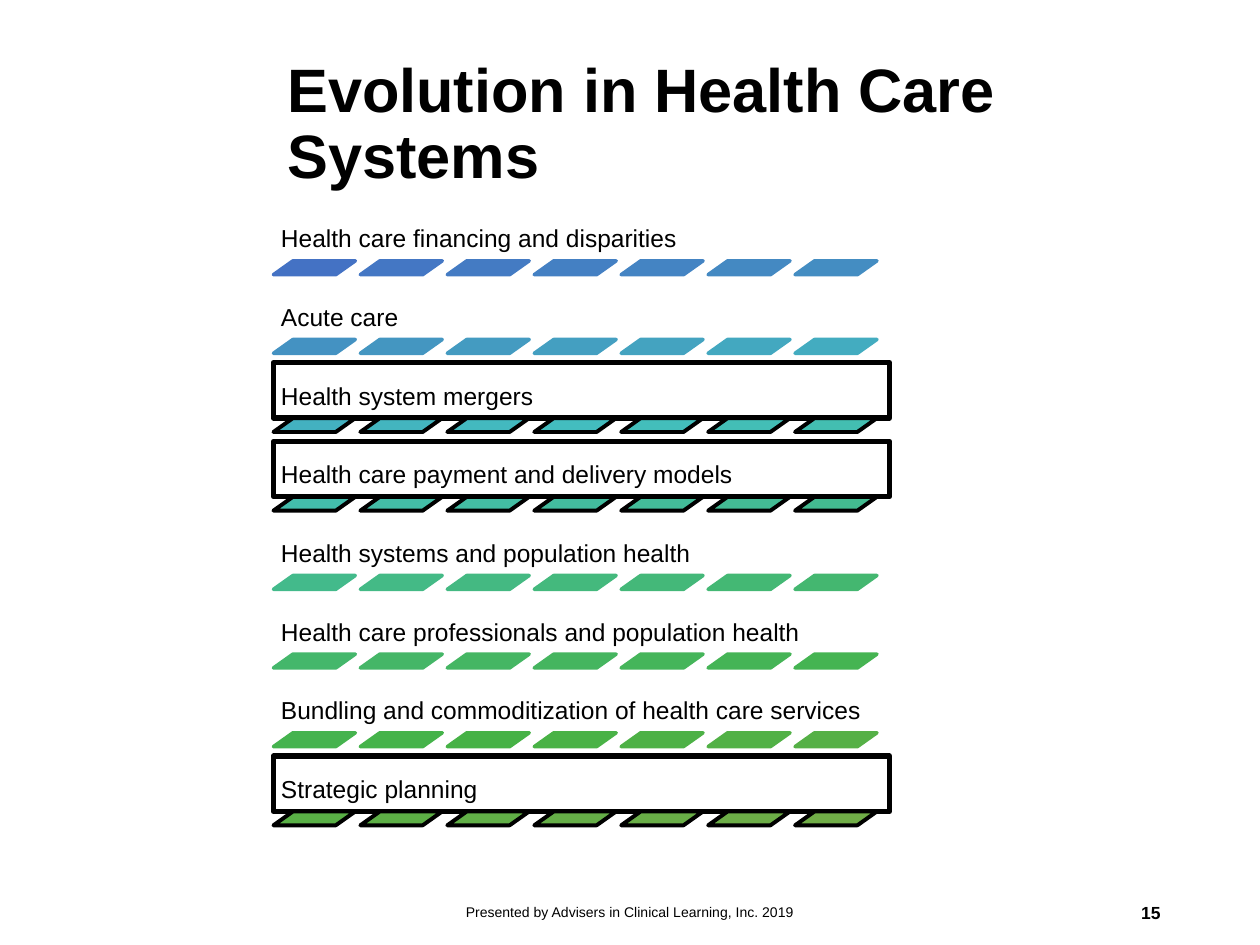
from colorsys import hls_to_rgb, rgb_to_hls
from dataclasses import dataclass

from pptx import Presentation
from pptx.dml.color import RGBColor
from pptx.enum.shapes import MSO_SHAPE
from pptx.enum.text import MSO_ANCHOR, MSO_AUTO_SIZE, PP_ALIGN
from pptx.util import Inches, Pt


@dataclass(frozen=True)
class Theme:
    font: str = "Arial"
    ink: RGBColor = RGBColor(0, 0, 0)
    first_bar: RGBColor = RGBColor(0x44, 0x72, 0xC4)
    last_bar: RGBColor = RGBColor(0x70, 0xAD, 0x47)
    title_size: float = 35
    topic_size: float = 14
    footer_size: float = 8
    number_size: float = 10
    frame_line: float = 3
    bar_line: float = 2
    framed_bar_line: float = 2.25


@dataclass(frozen=True)
class Grid:
    left: float = 2.17
    top: float = 1.63
    width: float = 4.89
    label_height: float = 0.44
    row_pitch: float = 4.37 / 7
    columns: int = 7
    column_pitch: float = 0.69
    bar_width: float = 0.65
    bar_height: float = 0.11
    bar_slant: float = 1.41

    def label_box(self, row):
        return self.left, self.top + row * self.row_pitch, self.width, self.label_height

    def bar_box(self, row, column):
        left = self.left + column * self.column_pitch
        top = self.top + row * self.row_pitch + self.label_height
        return left, top, self.bar_width, self.bar_height


THEME = Theme()
GRID = Grid()
TOPICS = [
    ("Health care financing and disparities", False),
    ("Acute care", False),
    ("Health system mergers", True),
    ("Health care payment and delivery models", True),
    ("Health systems and population health", False),
    ("Health care professionals and population health", False),
    ("Bundling and commoditization of health care services", False),
    ("Strategic planning", True),
]


def inches(box):
    return [Inches(length) for length in box]


def blend(share):
    start, end = (
        rgb_to_hls(*(channel / 255 for channel in color))
        for color in (THEME.first_bar, THEME.last_bar)
    )
    mixed = (a + (b - a) * share for a, b in zip(start, end))
    return RGBColor(*(round(channel * 255) for channel in hls_to_rgb(*mixed)))


def write(shape, text, size, bold=False, align=PP_ALIGN.LEFT,
          anchor=MSO_ANCHOR.MIDDLE, spacing=None, inset=None):
    frame = shape.text_frame
    frame.word_wrap = True
    frame.auto_size = MSO_AUTO_SIZE.NONE
    frame.vertical_anchor = anchor
    if inset is not None:
        frame.margin_left = frame.margin_right = Inches(inset)
        frame.margin_top = frame.margin_bottom = Inches(inset)
    paragraph = frame.paragraphs[0]
    paragraph.alignment = align
    paragraph.line_spacing = spacing
    run = paragraph.add_run()
    run.text = text
    run.font.name = THEME.font
    run.font.size = Pt(size)
    run.font.bold = bold
    run.font.color.rgb = THEME.ink


def add_title(slide, text, box):
    title = slide.shapes.title
    title.left, title.top, title.width, title.height = inches(box)
    write(title, text, THEME.title_size, bold=True, spacing=0.9)


def add_text(slide, text, box, size, **style):
    write(slide.shapes.add_textbox(*inches(box)), text, size, **style)


def add_outlined(slide, kind, box, line_color, line_width):
    shape = slide.shapes.add_shape(kind, *inches(box))
    shape.shadow.inherit = False
    shape.fill.background()
    shape.line.color.rgb = line_color
    shape.line.width = Pt(line_width)
    return shape


def add_bar(slide, row, column, framed):
    last_index = len(TOPICS) * GRID.columns - 1
    color = blend((row * GRID.columns + column) / last_index)
    bar = add_outlined(
        slide, MSO_SHAPE.PARALLELOGRAM, GRID.bar_box(row, column),
        THEME.ink if framed else color,
        THEME.framed_bar_line if framed else THEME.bar_line,
    )
    bar.adjustments[0] = GRID.bar_slant
    bar.fill.solid()
    bar.fill.fore_color.rgb = color


def add_topic(slide, row, text, framed):
    box = GRID.label_box(row)
    if framed:
        add_outlined(slide, MSO_SHAPE.RECTANGLE, box, THEME.ink, THEME.frame_line)
    add_text(slide, text, box, THEME.topic_size,
             anchor=MSO_ANCHOR.BOTTOM, spacing=0.9, inset=0.06)
    for column in range(GRID.columns):
        add_bar(slide, row, column, framed)


def main():
    presentation = Presentation()
    presentation.slide_width = Inches(10)
    presentation.slide_height = Inches(7.5)
    slide = presentation.slides.add_slide(presentation.slide_layouts[5])
    add_title(slide, "Evolution in Health Care Systems", (2.18, 0.27, 7.14, 1.45))
    add_text(slide, "Presented by Advisers in Clinical Learning, Inc. 2019",
             (3.31, 7.04, 3.38, 0.4), THEME.footer_size, align=PP_ALIGN.CENTER)
    add_text(slide, "15", (7.06, 7.04, 2.25, 0.4), THEME.number_size,
             bold=True, align=PP_ALIGN.RIGHT)
    for row, (text, framed) in enumerate(TOPICS):
        add_topic(slide, row, text, framed)
    presentation.save("out.pptx")


if __name__ == "__main__":
    main()
